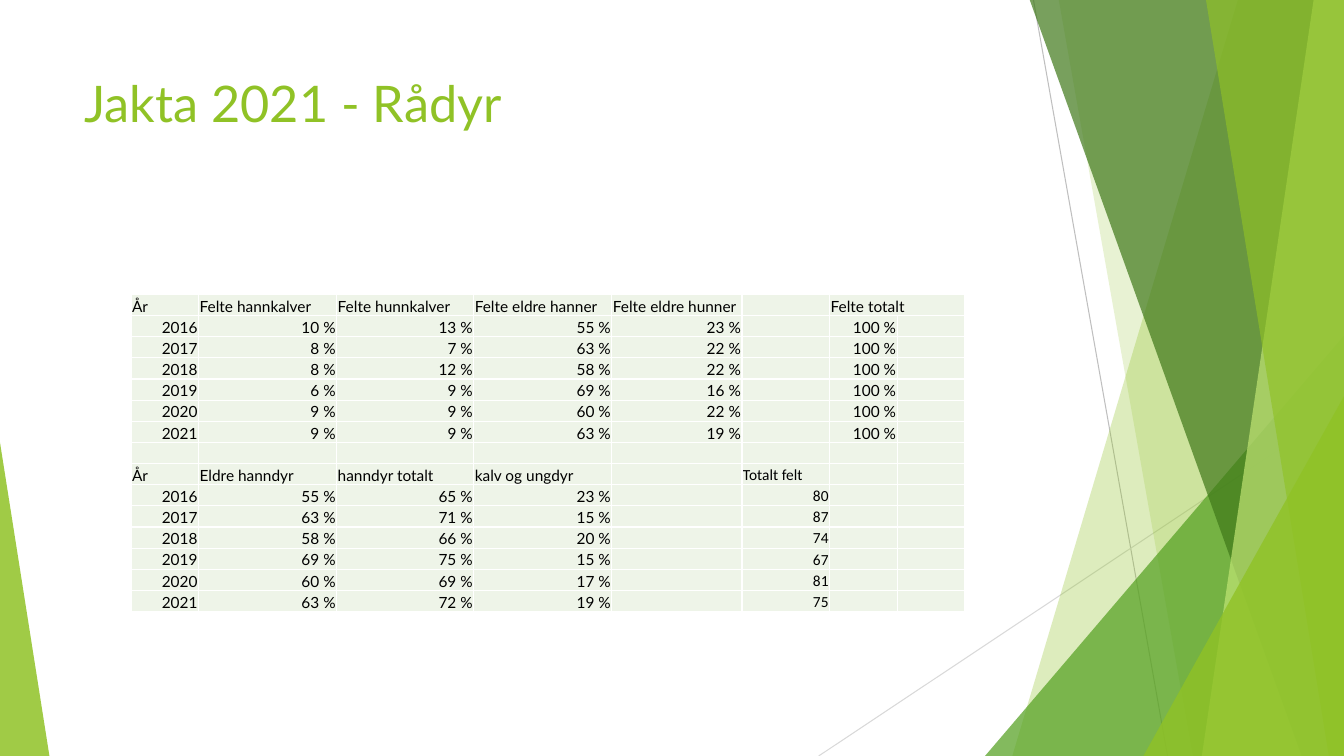
from lxml.etree import SubElement
from pptx import Presentation
from pptx.dml.color import RGBColor as RGB
from pptx.enum.shapes import MSO_CONNECTOR as CONN, MSO_SHAPE as SHAPE
from pptx.enum.text import MSO_ANCHOR as ANCHOR, PP_ALIGN as ALIGN
from pptx.oxml.ns import qn
from pptx.util import Inches, Pt

COLORS = {
    "lime": "90C226", "green": "54A021", "forest": "3F7819", "pale": "C0E474",
    "grey": "BFBFBF", "light_grey": "D9D9D9", "cell": "EEF4E8",
    "white": "FFFFFF", "black": "000000",
}
W, H, TOP = 13.33, 7.5, -0.01


def put_text(tf, text, size=11, font="Lato", color="black", align=ALIGN.LEFT):
    p = tf.paragraphs[0]
    p.alignment = align
    if not text:
        p._p.get_or_add_endParaRPr().set("sz", str(size * 100))
        return
    r = p.add_run()
    r.text = text
    r.font.size = Pt(size)
    r.font.name = font
    r.font.color.rgb = RGB.from_string(COLORS[color])


class Deck:
    def __init__(self):
        self.prs = Presentation()
        self.prs.slide_width, self.prs.slide_height = Inches(W), Inches(H)
        self.s = self.prs.slides.add_slide(self.prs.slide_layouts[6])

    def paint(self, sp, color, alpha):
        sp.shadow.inherit = False
        sp.line.fill.background()
        sp.fill.solid()
        sp.fill.fore_color.rgb = RGB.from_string(COLORS[color])
        clr = sp._element.spPr.find(qn("a:solidFill"))[0]
        SubElement(clr, qn("a:alpha")).set("val", str(alpha * 1000))

    def line(self, start, end, color):
        ends = [Inches(v) for v in (*start, *end)]
        cx = self.s.shapes.add_connector(CONN.STRAIGHT, *ends)
        cx.line.color.rgb = RGB.from_string(COLORS[color])
        cx.line.width = Pt(0.75)
        SubElement(cx._element.spPr, qn("a:effectLst"))

    def band(self, top_x, bottom_x, color, alpha):
        points = [(top_x, TOP), (W, TOP), (W, H), (bottom_x, H)]
        points = [(Inches(x), Inches(y)) for x, y in points]
        fb = self.s.shapes.build_freeform(*points[0])
        fb.add_line_segments(points[1:], close=True)
        self.paint(fb.convert_to_shape(), color, alpha)

    def triangle(self, x, y, w, apex, color, alpha):
        box = [Inches(v) for v in (x, y, w, H - y)]
        sp = self.s.shapes.add_shape(SHAPE.ISOSCELES_TRIANGLE, *box)
        sp.adjustments[0] = apex
        self.paint(sp, color, alpha)

    def text(self, x, y, w, h, text, **fmt):
        tf = self.s.shapes.add_textbox(*map(Inches, (x, y, w, h))).text_frame
        tf.word_wrap = True
        put_text(tf, text, **fmt)

    def cell(self, cell, text, **fmt):
        cell.margin_left = cell.margin_right = cell.margin_top = Inches(0.01)
        cell.margin_bottom = 0
        cell.vertical_anchor = ANCHOR.BOTTOM
        put_text(cell.text_frame, text, **fmt)
        tcPr = cell._tc.get_or_add_tcPr()
        for side in ("lnL", "lnR", "lnT", "lnB"):
            ln = SubElement(tcPr, qn("a:" + side), w=str(Pt(1)))
            clr = SubElement(SubElement(ln, qn("a:solidFill")), qn("a:srgbClr"))
            clr.set("val", COLORS["white"])
        cell.fill.solid()
        cell.fill.fore_color.rgb = RGB.from_string(COLORS["cell"])

    def table(self, x, y, widths, row_h, rows, header_rows, calibri_col):
        size = sum(widths), row_h * len(rows)
        frame = self.s.shapes.add_table(len(rows), len(widths), *map(Inches, (x, y, *size)))
        tbl = frame.table
        tbl.first_row = tbl.horz_banding = False
        for col, width in zip(tbl.columns, widths):
            col.width = Inches(width)
        for i, row in enumerate(rows):
            tbl.rows[i].height = Inches(row_h)
            align = ALIGN.LEFT if i in header_rows else ALIGN.RIGHT
            for j, text in enumerate(row):
                font = "Calibri" if j == calibri_col else "Lato"
                self.cell(tbl.cell(i, j), text, font=font, align=align)
        return tbl


def percents(values):
    return [f"{v} %" for v in values]


YEARS = range(2016, 2022)
SHARES = [(10, 13, 55, 23), (8, 7, 63, 22), (8, 12, 58, 22),
          (6, 9, 69, 16), (9, 9, 60, 22), (9, 9, 63, 19)]
GROUPS = [(55, 65, 23), (63, 71, 15), (58, 66, 20),
          (69, 75, 15), (60, 69, 17), (63, 72, 19)]
TOTALS = [80, 87, 74, 67, 81, 75]


def main():
    deck = Deck()
    deck.line((10.25, 0), (11.58, H), "grey")
    deck.line((W, 4.03), (8.12, H), "light_grey")
    deck.band(12.28, 10.04, "lime", 30)
    deck.band(10.5, 11.83, "lime", 20)
    deck.triangle(9.77, 3.33, 3.56, 1, "green", 72)
    deck.band(10.21, 12.91, "forest", 70)
    deck.band(13.03, 11.92, "pale", 70)
    deck.band(11.96, 13.18, "lime", 65)
    deck.triangle(11.34, 3.93, 1.99, 1, "lime", 80)
    deck.triangle(0, 4.39, 0.49, 0, "lime", 85)
    deck.text(0.74, 0.67, 9.4, 1.44, "Jakta 2021 - Rådyr", size=36, color="lime")

    rows = [["År", "Felte hannkalver", "Felte hunnkalver", "Felte eldre hanner",
             "Felte eldre hunner", "", "Felte totalt", ""]]
    rows += [[str(year), *percents(share), "", "100 %", ""]
             for year, share in zip(YEARS, SHARES)]
    rows.append([""] * 8)
    second_header = len(rows)
    rows.append(["År", "Eldre hanndyr", "hanndyr totalt", "kalv og ungdyr",
                 "", "Totalt felt", "", ""])
    rows += [[str(year), *percents(group), "", str(total), "", ""]
             for year, group, total in zip(YEARS, GROUPS, TOTALS)]
    widths = [0.67, 1.37, 1.36, 1.37, 1.29, 0.87, 0.67, 0.67]
    tbl = deck.table(1.3, 2.92, widths, 0.21, rows, (0, second_header), 5)
    tbl.cell(0, 6).merge(tbl.cell(0, 7))
    deck.prs.save("out.pptx")


if __name__ == "__main__":
    main()
